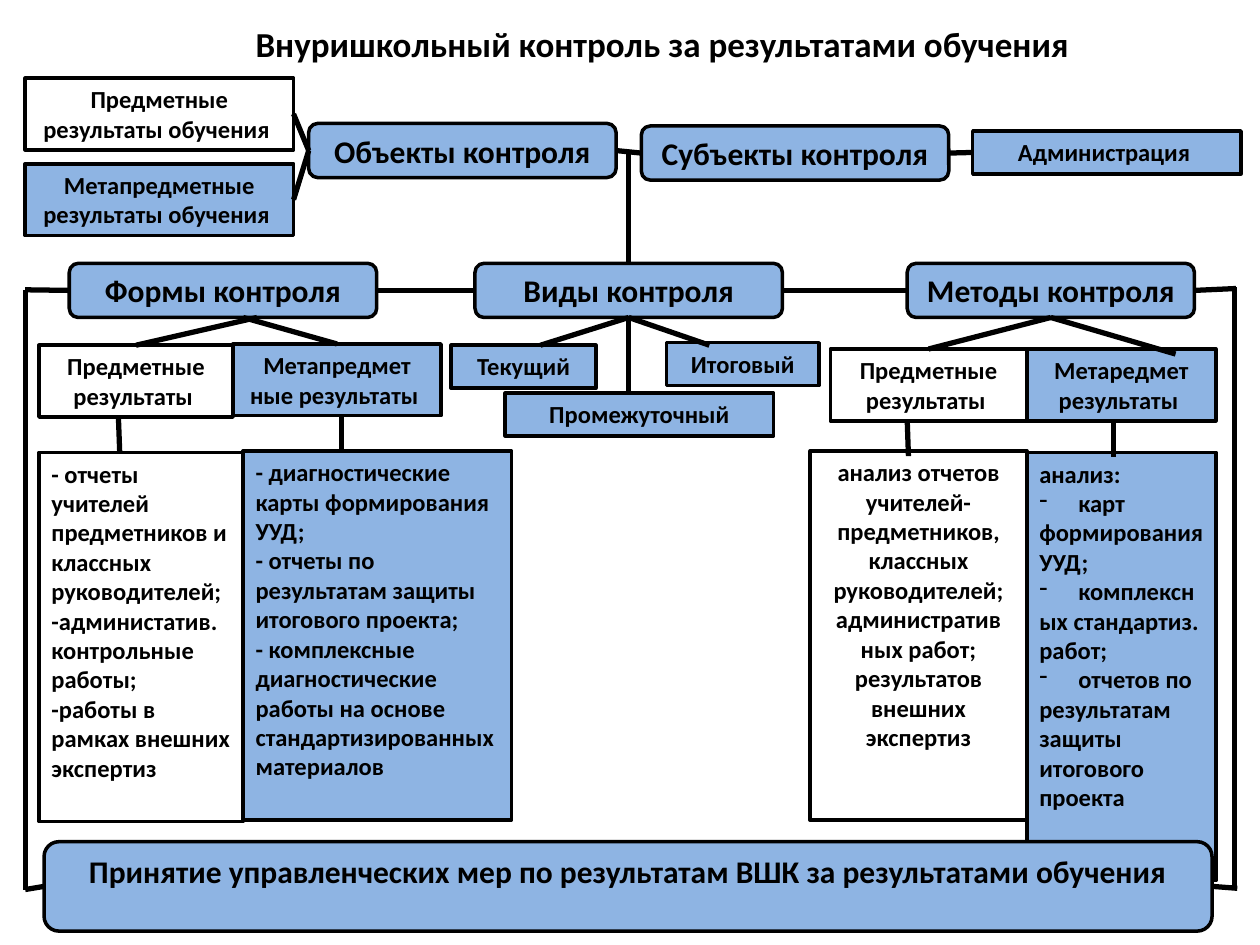
"""Build a slide with a chart of school control over learning results."""
from lxml import etree
from pptx import Presentation
from pptx.dml.color import RGBColor
from pptx.enum import shapes, text
from pptx.oxml import ns
from pptx.util import Inches, Pt

COLORS = {"blue": "8EB4E3", "white": "FFFFFF", "black": "000000"}
RECT = shapes.MSO_SHAPE.RECTANGLE
ROUND = shapes.MSO_SHAPE.ROUNDED_RECTANGLE
BAND = shapes.MSO_SHAPE.FLOWCHART_ALTERNATE_PROCESS
CENTER, LEFT = text.PP_ALIGN.CENTER, text.PP_ALIGN.LEFT
TOP, MIDDLE = text.MSO_ANCHOR.TOP, text.MSO_ANCHOR.MIDDLE


def write(shape, wording, size, align, anchor):
    frame = shape.text_frame
    frame.text = wording
    frame.word_wrap = True
    frame.vertical_anchor = anchor
    for paragraph in frame.paragraphs:
        paragraph.alignment = align
        for run in paragraph.runs:
            run.font.name = "Calibri"
            run.font.size = Pt(size)
            run.font.bold = True
            run.font.color.rgb = RGBColor.from_string(COLORS["black"])


presentation = Presentation()
presentation.slide_width = Inches(10)
presentation.slide_height = Inches(7.5)
slide = presentation.slides.add_slide(presentation.slide_layouts[6])

title = slide.shapes.add_textbox(Inches(1.93), Inches(0.13), Inches(6.85), Inches(0.44))
write(title, "Внуришкольный контроль за результатами обучения", 20, LEFT, TOP)

headings = [
    ("objects", 2.45, 0.98, 2.44, "Объекты контроля"),
    ("subjects", 5.09, 1, 2.44, "Субъекты контроля"),
    ("forms", 0.55, 2.09, 2.44, "Формы контроля"),
    ("kinds", 3.77, 2.09, 2.44, "Виды контроля"),
    ("methods", 7.2, 2.09, 2.28, "Методы контроля"),
]
labels = [
    ("subject results", 0.2, 0.62, 2.13, 0.57, "white", "Предметные результаты обучения "),
    ("meta results", 0.2, 1.3, 2.13, 0.57, "blue", "Метапредметные результаты обучения "),
    ("administration", 7.72, 1.04, 2.13, 0.34, "blue", "Администрация "),
    ("current", 3.58, 2.74, 1.15, 0.34, "blue", "Текущий"),
    ("interim", 4.01, 3.12, 2.13, 0.34, "blue", "Промежуточный"),
    ("final", 5.29, 2.72, 1.21, 0.34, "blue", "Итоговый"),
    ("meta forms", 1.85, 2.73, 1.65, 0.57, "blue", "Метапредмет\nные результаты "),
    ("subject forms", 0.31, 2.74, 1.54, 0.57, "white", "Предметные результаты "),
    ("subject methods", 6.59, 2.77, 1.56, 0.57, "white", "Предметные результаты "),
    ("meta methods", 8.15, 2.77, 1.5, 0.57, "blue", "Метаредмет\nрезультаты "),
]
columns = [
    ("subject form list", 0.31, 3.59, 1.62, 2.93, "white", LEFT,
     "- отчеты учителей предметников и классных руководителей;\n"
     "-администатив. контрольные работы;\n"
     "-работы в рамках внешних экспертиз"),
    ("meta form list", 1.93, 3.58, 2.13, 2.93, "blue", LEFT,
     "- диагностические карты формирования УУД;\n"
     "- отчеты по результатам защиты итогового проекта;\n"
     "- комплексные диагностические работы на основе стандартизированных материалов"),
    ("subject method list", 6.43, 3.58, 1.72, 2.93, "white", CENTER,
     "анализ отчетов учителей-предметников, классных руководителей; административ\n"
     "ных работ; результатов внешних экспертиз"),
    ("meta method list", 8.15, 3.59, 1.5, 3.4, "blue", LEFT,
     "анализ:\nкарт\nформирования УУД;\nкомплексн\nых стандартиз. работ;\n"
     "отчетов по\nрезультатам защиты итогового проекта"),
]
decision = ("decision", BAND, 0.35, 6.68, 9.27, 0.71, "blue", 18, CENTER, TOP,
            "Принятие управленческих мер по результатам ВШК за результатами обучения")

boxes = [(name, ROUND, x, y, width, 0.43, "blue", 18, CENTER, MIDDLE, wording)
         for name, x, y, width, wording in headings]
boxes += [(name, RECT, x, y, width, height, fill, 14, CENTER, TOP, wording)
          for name, x, y, width, height, fill, wording in labels]
boxes += [(name, RECT, x, y, width, height, fill, 14, align, TOP, wording)
          for name, x, y, width, height, fill, align, wording in columns]
boxes.append(decision)

placed = {}
for name, kind, x, y, width, height, fill, size, align, anchor, wording in boxes:
    shape = slide.shapes.add_shape(kind, Inches(x), Inches(y), Inches(width), Inches(height))
    shape.shadow.inherit = False
    shape.fill.solid()
    shape.fill.fore_color.rgb = RGBColor.from_string(COLORS[fill])
    shape.line.color.rgb = RGBColor.from_string(COLORS["black"])
    shape.line.width = Pt(2)
    write(shape, wording, size, align, anchor)
    placed[name] = shape

for paragraph in placed["meta method list"].text_frame.paragraphs[1:6:2]:
    properties = paragraph._p.get_or_add_pPr()
    properties.set("marL", str(Inches(0.31)))
    properties.set("indent", str(-Inches(0.31)))
    etree.SubElement(properties, ns.qn("a:buChar")).set("char", "-")

links = [
    (("subject results", 3), ("objects", 1)),
    (("meta results", 3), ("objects", 1)),
    (("objects", 3), ("subjects", 1)),
    (("subjects", 3), ("administration", 1)),
    ((4.99, 1.19), ("kinds", 0)),
    (("kinds", 1), ("forms", 3)),
    (("methods", 1), ("kinds", 3)),
    (("kinds", 2), (4.29, 2.74)),
    (("kinds", 2), (4.99, 3.11)),
    (("kinds", 2), (5.63, 2.74)),
    ((2.04, 2.52), ("subject forms", 0)),
    ((1.93, 2.52), ("meta forms", 0)),
    (("methods", 2), ("subject methods", 0)),
    (("methods", 2), (9.33, 2.81)),
    ((0.94, 3.31), (0.95, 3.59)),
    ((2.71, 3.3), (2.71, 3.59)),
    ((7.2, 3.33), (7.21, 3.62)),
    ((8.84, 3.35), (8.84, 3.63)),
    (("forms", 1), (0.2, 2.3)),
    ((0.2, 2.3), (0.2, 7.06)),
    (("decision", 1), (0.2, 7.06)),
    ((9.81, 2.29), ("methods", 3)),
    ((9.8, 2.28), (9.8, 7.05)),
    ((9.82, 7.05), ("decision", 3)),
]
for start, end in links:
    points = [(0, 0) if point[0] in placed else point for point in (start, end)]
    connector = slide.shapes.add_connector(
        shapes.MSO_CONNECTOR.STRAIGHT, *[Inches(value) for point in points for value in point])
    if start[0] in placed:
        connector.begin_connect(placed[start[0]], start[1])
    if end[0] in placed:
        connector.end_connect(placed[end[0]], end[1])
    connector.line.color.rgb = RGBColor.from_string(COLORS["black"])
    connector.line.width = Pt(3)
    etree.SubElement(connector._element.spPr, ns.qn("a:effectLst"))

presentation.save("out.pptx")
